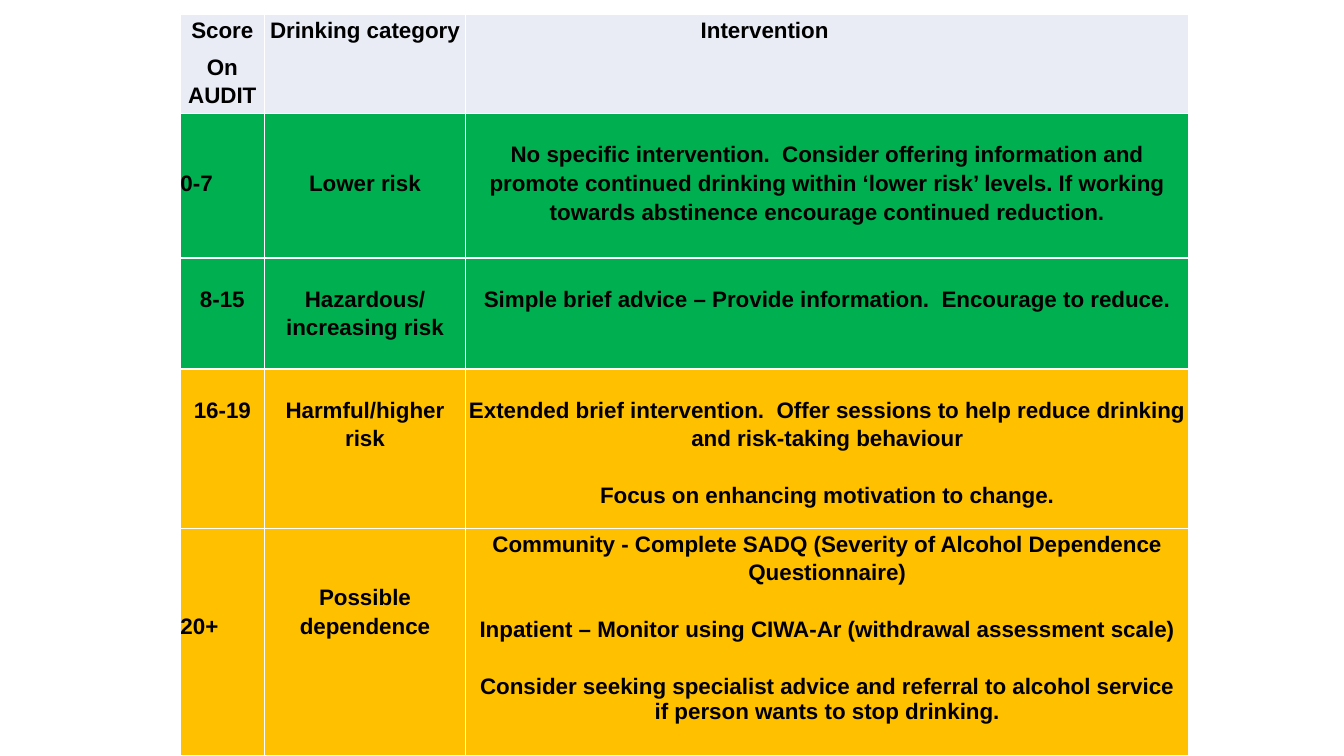
import pptx
import pptx.dml.color
import pptx.enum.text
import pptx.util
from lxml import etree
from pptx.oxml.ns import qn

Inches = pptx.util.Inches
Pt = pptx.util.Pt
ALIGN = pptx.enum.text.PP_ALIGN

HEADER, LOW, HIGH = "E9EBF5", "00B050", "FFC000"
FIRST_LINE, LINE = 0.25, 0.285
LINE_GAP = 20.4
COLUMN_WIDTHS = (0.83, 2, 7.17)

BANDS = [
    (LOW, 1.43, [
        (2, ["0-7"]),
        (2, ["Lower risk"]),
        (1, ["No specific intervention.  Consider offering information and promote "
             "continued drinking within ‘lower risk’ levels. If working towards "
             "abstinence encourage continued reduction."]),
    ]),
    (LOW, 1.1, [
        (1, ["8-15"]),
        (1, ["Hazardous/", "increasing risk"]),
        (1, ["Simple brief advice – Provide information.  Encourage to reduce."]),
    ]),
    (HIGH, 1.58, [
        (1, ["16-19"]),
        (1, ["Harmful/higher risk"]),
        (1, ["Extended brief intervention.  Offer sessions to help reduce drinking "
             "and risk-taking behaviour",
             "Focus on enhancing motivation to change."]),
    ]),
    (HIGH, 2.26, [
        (3, ["20+"]),
        (2, ["Possible dependence"]),
        (0, ["Community - Complete SADQ (Severity of Alcohol Dependence Questionnaire)",
             "Inpatient – Monitor using CIWA-Ar (withdrawal assessment scale)",
             "Consider seeking specialist advice and referral to alcohol service"]),
    ]),
]
LEFT_ALIGNED_SCORES = ("0-7", "20+")


def color(value):
    """Return the colour for a hex string."""
    return pptx.dml.color.RGBColor.from_string(value)


def add_text(frame, text, align=ALIGN.CENTER, before=0, spacing=1.15, size=16):
    """Write one bold paragraph, using the empty first one if it is free."""
    paragraph = frame.paragraphs[0] if not frame.text else frame.add_paragraph()
    paragraph.alignment = align
    paragraph.line_spacing = spacing
    paragraph.space_before = Pt(before)
    run = paragraph.add_run()
    run.text = text
    run.font.name = "Arial"
    run.font.size = Pt(size)
    run.font.bold = True
    run.font.color.rgb = color("000000")


def add_borders(cell, line_color="FFFFFF", width=1):
    """Put a solid line on all four sides of a cell."""
    properties = cell._tc.get_or_add_tcPr()
    for position, side in enumerate(("a:lnL", "a:lnR", "a:lnT", "a:lnB")):
        line = etree.Element(qn(side), w=str(Pt(width)))
        fill = etree.SubElement(line, qn("a:solidFill"))
        etree.SubElement(fill, qn("a:srgbClr"), val=line_color)
        properties.insert(position, line)


def format_cell(cell, fill, top=0, left=0):
    """Set the fill, borders and margins of a cell."""
    cell.fill.solid()
    cell.fill.fore_color.rgb = color(fill)
    add_borders(cell)
    cell.margin_top, cell.margin_left = Inches(top), Inches(left)
    cell.margin_right = cell.margin_bottom = 0


def fill_header(score, category, intervention):
    """Write the three column headings."""
    format_cell(score, HEADER)
    add_text(score.text_frame, "Score", before=6)
    add_text(score.text_frame, "On AUDIT", before=6)
    format_cell(category, HEADER)
    add_text(category.text_frame, "Drinking category", before=6)
    format_cell(intervention, HEADER, left=2.33)
    add_text(intervention.text_frame, "Intervention", align=ALIGN.LEFT, before=6)


def fill_band(cells, fill, contents):
    """Write one score band across its row."""
    for cell, (lead_lines, texts) in zip(cells, contents):
        top = FIRST_LINE + LINE * (lead_lines - 1) if lead_lines else 0
        format_cell(cell, fill, top=top)
        for index, text in enumerate(texts):
            gap = LINE_GAP if index and texts[0] != "Hazardous/" else 0
            align = ALIGN.LEFT if text in LEFT_ALIGNED_SCORES else ALIGN.CENTER
            add_text(cell.text_frame, text, align=align, before=gap)


def add_audit_table(slide):
    """Add the table of score bands and interventions."""
    heights = [0.99] + [height for _, height, _ in BANDS]
    table = slide.shapes.add_table(
        len(heights), len(COLUMN_WIDTHS), Inches(1.79), Inches(0.14),
        Inches(sum(COLUMN_WIDTHS)), Inches(sum(heights))).table
    table.first_row = table.horz_banding = False
    for column, width in zip(table.columns, COLUMN_WIDTHS):
        column.width = Inches(width)
    for row, height in zip(table.rows, heights):
        row.height = Inches(height)
    fill_header(*table.rows[0].cells)
    for index, (fill, _, contents) in enumerate(BANDS, start=1):
        fill_band(table.rows[index].cells, fill, contents)
    add_text(table.cell(4, 2).text_frame, "if person wants to stop drinking.", spacing=1.0)


def main():
    """Build the slide and save it."""
    deck = pptx.Presentation()
    deck.slide_width, deck.slide_height = Inches(13.33), Inches(7.5)
    slide = deck.slides.add_slide(deck.slide_layouts[6])
    add_audit_table(slide)
    deck.save("out.pptx")


if __name__ == "__main__":
    main()
